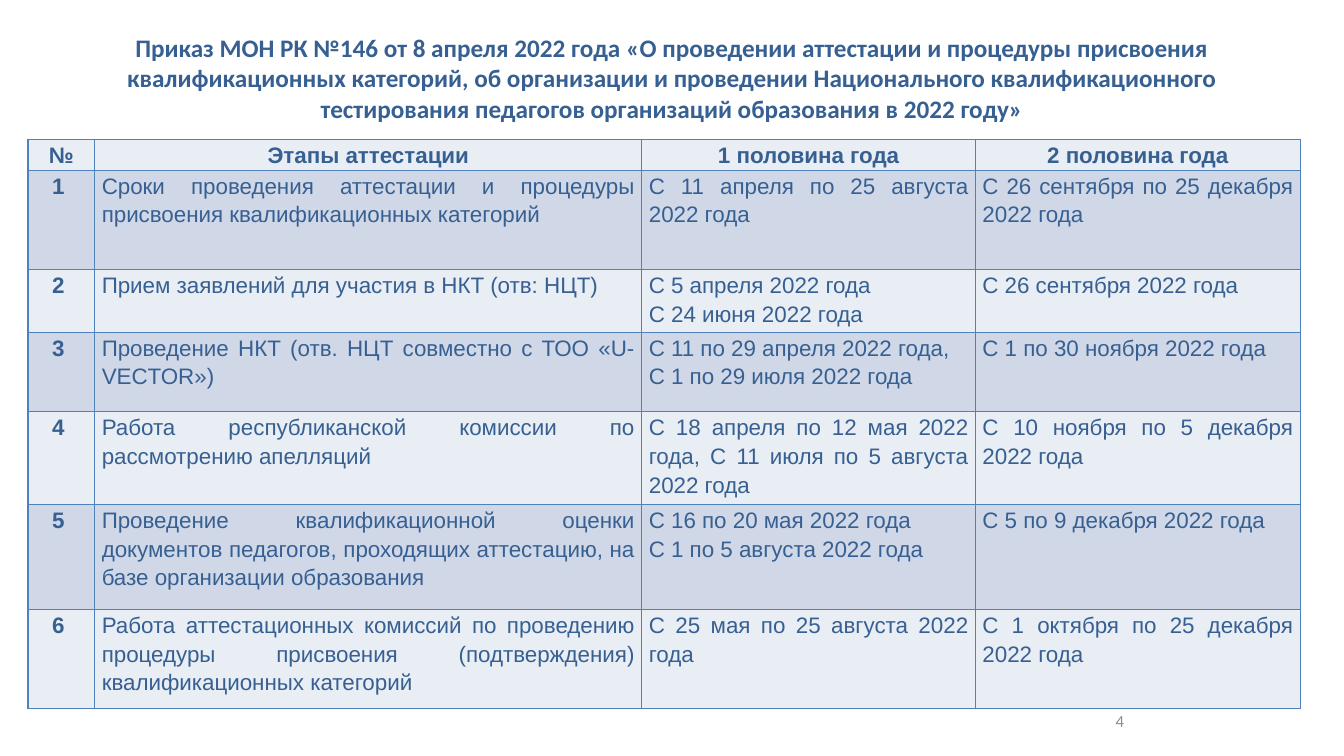
from lxml.etree import SubElement
from pptx import Presentation
from pptx.dml.color import RGBColor
from pptx.enum.text import MSO_ANCHOR as Anchor, MSO_AUTO_SIZE as AutoSize, PP_ALIGN as Align
from pptx.oxml.ns import qn
from pptx.util import Pt

HEADING = (
    "Приказ МОН РК №146 от 8 апреля 2022 года «О проведении аттестации и процедуры "
    "присвоения квалификационных категорий, об организации и проведении Национального "
    "квалификационного тестирования педагогов организаций образования в 2022 году»"
)
COLUMNS = ["№", "Этапы аттестации", "1 половина года", "2 половина года"]
# Each stage: description, first half-year dates, second half-year dates
STAGES = [
    ("Сроки проведения аттестации и процедуры присвоения квалификационных категорий",
     "С 11 апреля по 25 августа 2022 года",
     "С 26 сентября по 25 декабря 2022 года"),
    ("Прием заявлений для участия в НКТ (отв: НЦТ)",
     "С 5 апреля 2022 года\nС 24 июня 2022 года",
     "С 26 сентября 2022 года"),
    ("Проведение НКТ (отв. НЦТ совместно с ТОО «U-VECTOR»)",
     "С 11 по 29 апреля 2022 года,\nС 1 по 29 июля 2022 года",
     "С 1 по 30 ноября 2022 года"),
    ("Работа республиканской комиссии по рассмотрению апелляций",
     "С 18 апреля по 12 мая 2022 года, С 11 июля по 5 августа 2022 года",
     "С 10 ноября по 5 декабря 2022 года"),
    ("Проведение квалификационной оценки документов педагогов, проходящих аттестацию, "
     "на базе организации образования",
     "С 16 по 20 мая 2022 года\nС 1 по 5 августа 2022 года",
     "С 5 по 9 декабря 2022 года"),
    ("Работа аттестационных комиссий по проведению процедуры присвоения "
     "(подтверждения) квалификационных категорий",
     "С 25 мая по 25 августа 2022 года",
     "С 1 октября по 25 декабря 2022 года"),
]
COLUMN_WIDTHS = [47.7, 390.8, 238.3, 232]
ROW_HEIGHTS = [22.3, 71, 44.7, 56.8, 56.8, 75, 70.6]


def color(hex_code):
    return RGBColor.from_string(hex_code)


class StageSlide:
    ink, muted, border = "376092", "8C8C8C", "4F81BD"
    bands = ("E9EDF4", "D0D8E8")
    heading_font, table_font = "Calibri", "Arial"

    def __init__(self, deck):
        self.slide = deck.slides.add_slide(deck.slide_layouts[5])

    def add_text(self, frame, text, font, size, ink, bold=False, align=Align.CENTER, spacing=1.0):
        """Fill a text frame, one paragraph per line of text."""
        frame.word_wrap = True
        for index, line in enumerate(text.split("\n")):
            paragraph = frame.add_paragraph() if index else frame.paragraphs[0]
            paragraph.alignment = align
            paragraph.line_spacing = spacing
            run = paragraph.add_run()
            run.text = line
            run.font.name, run.font.size, run.font.bold = font, Pt(size), bold
            run.font.color.rgb = color(ink)

    def heading(self, text, left, top, width, height):
        title = self.slide.shapes.title
        title.left, title.top, title.width, title.height = map(Pt, (left, top, width, height))
        frame = title.text_frame
        frame.auto_size = AutoSize.NONE
        frame.vertical_anchor = Anchor.MIDDLE
        frame.margin_bottom = Pt(25.6)
        self.add_text(frame, text, self.heading_font, 18, self.ink, bold=True)

    def page_number(self, text, left, top, width, height):
        frame = self.slide.shapes.add_textbox(*map(Pt, (left, top, width, height))).text_frame
        frame.vertical_anchor = Anchor.MIDDLE
        self.add_text(frame, text, self.heading_font, 12, self.muted)

    def outline(self, cell):
        """Draw all four borders of a table cell."""
        properties = cell._tc.get_or_add_tcPr()
        for side in ("a:lnL", "a:lnR", "a:lnT", "a:lnB"):
            line = SubElement(properties, qn(side), w=str(Pt(1)))
            fill = SubElement(line, qn("a:solidFill"))
            SubElement(fill, qn("a:srgbClr"), val=self.border)

    def table(self, rows, left, top, widths, heights):
        box = map(Pt, (left, top, sum(widths), sum(heights)))
        grid = self.slide.shapes.add_table(len(rows), len(widths), *box).table
        grid.horz_banding = grid.first_row = False
        for column, width in zip(grid.columns, widths):
            column.width = Pt(width)
        for row_index, texts in enumerate(rows):
            grid.rows[row_index].height = Pt(heights[row_index])
            for column_index, text in enumerate(texts):
                cell = grid.cell(row_index, column_index)
                is_number = row_index > 0 and column_index == 0
                is_label = row_index == 0 or is_number
                self.outline(cell)
                cell.fill.solid()
                cell.fill.fore_color.rgb = color(self.bands[row_index % 2])
                cell.margin_left = Pt(5)
                cell.margin_right = Pt(9.4 if is_number else 5)
                cell.margin_top = cell.margin_bottom = 0
                self.add_text(cell.text_frame, text, self.table_font, 16, self.ink, bold=is_label,
                              align=Align.CENTER if is_label else Align.JUSTIFY, spacing=1.15)


def main():
    deck = Presentation()
    deck.slide_width, deck.slide_height = Pt(960), Pt(540)
    page = StageSlide(deck)
    page.heading(HEADING, 48, 21.6, 864, 90)
    page.page_number("4", 688, 500.5, 224, 28.8)
    numbered = [(str(number), *stage) for number, stage in enumerate(STAGES, 1)]
    page.table([COLUMNS, *numbered], 20, 99.5, COLUMN_WIDTHS, ROW_HEIGHTS)
    deck.save("out.pptx")


if __name__ == "__main__":
    main()
